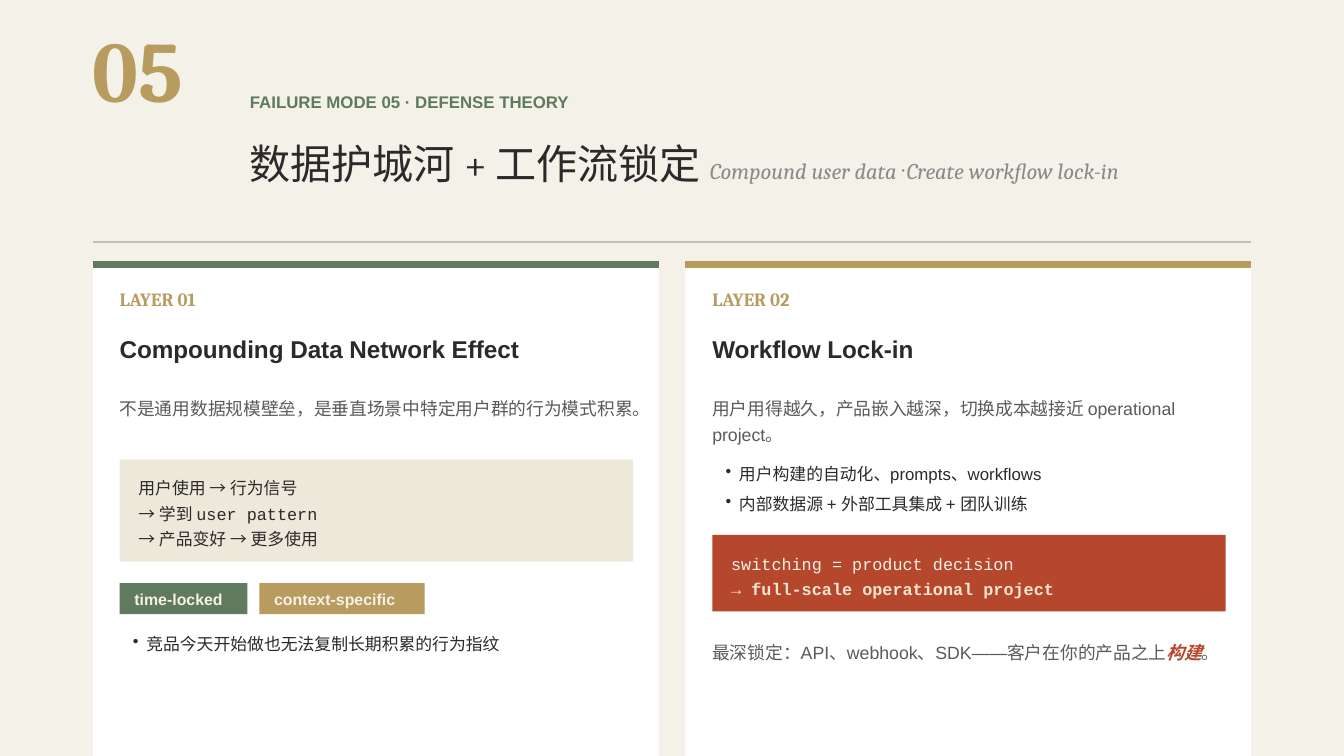
from pptx import Presentation
from pptx.dml.color import RGBColor
from pptx.enum.shapes import MSO_CONNECTOR, MSO_SHAPE
from pptx.oxml.ns import qn
from pptx.util import Inches, Pt
from lxml import etree

CREAM = RGBColor(0xF4, 0xF1, 0xE8)
GOLD = RGBColor(0xB8, 0x9B, 0x5E)
GREEN = RGBColor(0x5F, 0x7A, 0x5C)
RUST = RGBColor(0xB5, 0x48, 0x2C)
SAND = RGBColor(0xED, 0xE8, 0xDA)
PEACH = RGBColor(0xF4, 0xE4, 0xD0)
RULE = RGBColor(0xC8, 0xC0, 0xAE)
INK = RGBColor(0x2A, 0x2A, 0x2A)
BODY = RGBColor(0x5A, 0x5A, 0x5A)
MUTED = RGBColor(0x8A, 0x8A, 0x8A)
WHITE = RGBColor(0xFF, 0xFF, 0xFF)

SERIF, SANS, MONO = "Cambria", "Arial", "Courier New"
PAGE_WIDTH, PAGE_HEIGHT = 10, 10 * 9 / 16
MARGIN = 0.69
CARD_WIDTH, CARD_TOP = 4.21, 1.95
CARD_LEFTS = (MARGIN, PAGE_WIDTH - MARGIN - CARD_WIDTH)
PADDING = 0.2
PANEL_WIDTH, TEXT_WIDTH = 3.82, 3.9


def style_font(font, size, name, color, bold=False, italic=False):
    font.size, font.name = Pt(size), name
    font.color.rgb = color
    font.bold, font.italic = bold, italic


def add_text(page, left, top, width, height, lines, size, name, color,
             bold=False, leading=None, after=0, indent=0):
    """Add a text box with one paragraph per line."""
    box = page.shapes.add_textbox(
        Inches(left), Inches(top), Inches(width), Inches(height))
    frame = box.text_frame
    frame.word_wrap = True
    frame.margin_left = Inches(indent)
    frame.margin_right = frame.margin_top = frame.margin_bottom = 0
    for index, line in enumerate(lines):
        para = frame.add_paragraph() if index else frame.paragraphs[0]
        if indent:
            add_bullet(para, indent)
        para.add_run().text = line
        style_font(para.font, size, name, color, bold)
        para.space_after = Pt(after)
        if leading:
            para.line_spacing = Pt(leading)
    return frame.paragraphs


def add_bullet(para, indent):
    properties = para._p.get_or_add_pPr()
    properties.set("marL", str(Inches(indent)))
    properties.set("indent", str(-Inches(indent)))
    etree.SubElement(properties, qn("a:buChar")).set("char", "•")


def add_span(para, text, size, name, color, italic=False, bold=False):
    span = para.add_run()
    span.text = text
    style_font(span.font, size, name, color, bold, italic)


def add_panel(page, left, top, width, height, color):
    panel = page.shapes.add_shape(
        MSO_SHAPE.RECTANGLE,
        Inches(left), Inches(top), Inches(width), Inches(height))
    panel.shadow.inherit = False
    panel.fill.solid()
    panel.fill.fore_color.rgb = color
    panel.line.fill.background()


def add_rule(page, left, right, y, color, weight):
    rule = page.shapes.add_connector(
        MSO_CONNECTOR.STRAIGHT,
        Inches(left), Inches(y), Inches(right), Inches(y))
    rule.line.color.rgb = color
    rule.line.width = Pt(weight)
    etree.SubElement(rule._element.spPr, qn("a:effectLst"))


def add_body(page, left, top, height, text):
    return add_text(page, left, top, TEXT_WIDTH, height, [text],
                    9.5, SANS, BODY, leading=13.8)


def add_bullets(page, left, top, height, lines):
    add_text(page, left, top, PANEL_WIDTH, height, lines, 9, SANS, INK,
             leading=13.1, after=3, indent=0.1)


def add_code(page, left, top, height, fill, color, lines):
    add_panel(page, left, top, PANEL_WIDTH, height, fill)
    return add_text(page, left + 0.14, top + 0.1, 3.61, height - 0.2,
                    lines, 9, MONO, color, leading=13.5)


def add_tag(page, left, top, width, text, color):
    add_panel(page, left, top, width, 0.23, color)
    add_text(page, left + 0.11, top + 0.05, width - 0.2, 0.15, [text],
             8.5, SANS, CREAM, bold=True)


def add_card(page, left, label, title, summary, accent):
    """Add the parts both cards share; return the left edge of the content."""
    add_panel(page, left, CARD_TOP, CARD_WIDTH, PAGE_HEIGHT - CARD_TOP, WHITE)
    add_rule(page, left, left + CARD_WIDTH, CARD_TOP + 0.02, accent, 3.75)
    inner = left + PADDING
    add_text(page, inner, 2.14, TEXT_WIDTH, 0.16, [label],
             10, SERIF, GOLD, bold=True)
    add_text(page, inner, 2.49, TEXT_WIDTH, 0.21, [title],
             13, SANS, INK, bold=True)
    add_body(page, inner, 2.93, 0.38, summary)
    return inner


def add_header(page):
    add_rule(page, MARGIN, PAGE_WIDTH - MARGIN, 1.8, RULE, 0.75)
    add_text(page, MARGIN, 0.25, 0.85, 0.64, ["05"], 46, SERIF, GOLD,
             bold=True, leading=46)
    add_text(page, 1.86, 0.68, 7.6, 0.15, ["FAILURE MODE 05 · DEFENSE THEORY"],
             9, SANS, GREEN, bold=True)
    title = add_text(page, 1.86, 1.03, 7.6, 0.43, ["数据护城河 + 工作流锁定 "],
                     22, SERIF, INK)[0]
    add_span(title, "Compound user data · Create workflow lock-in",
             12, SERIF, MUTED, italic=True)


def add_data_card(page):
    left = add_card(page, CARD_LEFTS[0], "LAYER 01",
                    "Compounding Data Network Effect",
                    "不是通用数据规模壁垒，是垂直场景中特定用户群的行为模式积累。", GREEN)
    add_code(page, left, 3.42, 0.76, SAND, INK,
             ["用户使用 → 行为信号", "→ 学到 user pattern", "→ 产品变好 → 更多使用"])
    add_tag(page, left, 4.34, 0.95, "time-locked", GREEN)
    add_tag(page, left + 1.04, 4.34, 1.23, "context-specific", GOLD)
    add_bullets(page, left, 4.68, 0.22, ["竞品今天开始做也无法复制长期积累的行为指纹"])


def add_workflow_card(page):
    left = add_card(page, CARD_LEFTS[1], "LAYER 02", "Workflow Lock-in",
                    "用户用得越久，产品嵌入越深，切换成本越接近 operational project。", GOLD)
    add_bullets(page, left, 3.42, 0.45,
                ["用户构建的自动化、prompts、workflows",
                 "内部数据源 + 外部工具集成 + 团队训练"])
    code = add_code(page, left, 3.98, 0.57, RUST, CREAM,
                    ["switching = product decision",
                     "→ full-scale operational project"])
    style_font(code[1].font, 9, MONO, PEACH, bold=True)
    closing = add_body(page, left, 4.74, 0.19,
                       "最深锁定：API、webhook、SDK——客户在你的产品之上")[0]
    add_span(closing, "构建", 9.5, SANS, RUST, italic=True, bold=True)
    add_span(closing, "。", 9.5, SANS, BODY)


def main():
    deck = Presentation()
    deck.slide_width, deck.slide_height = Inches(PAGE_WIDTH), Inches(PAGE_HEIGHT)
    page = deck.slides.add_slide(deck.slide_layouts[6])
    page.background.fill.solid()
    page.background.fill.fore_color.rgb = CREAM
    add_header(page)
    add_data_card(page)
    add_workflow_card(page)
    deck.save("out.pptx")


if __name__ == "__main__":
    main()
